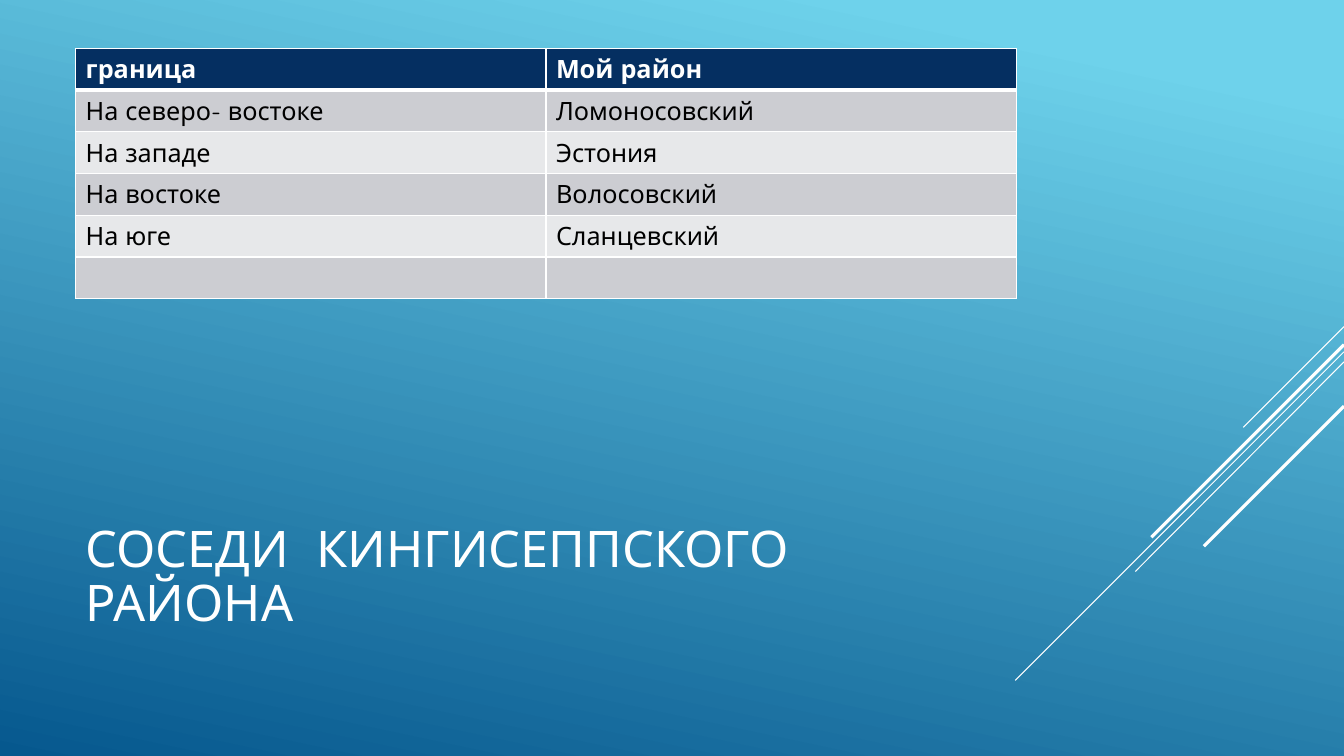
from typing import NamedTuple

from lxml.etree import SubElement
from pptx import Presentation
from pptx.dml.color import RGBColor
from pptx.enum.shapes import MSO_CONNECTOR as Connector
from pptx.enum.text import MSO_ANCHOR as Anchor
from pptx.enum.text import MSO_AUTO_SIZE as AutoSize
from pptx.enum.text import PP_ALIGN as Align
from pptx.oxml import parse_xml
from pptx.oxml.ns import nsdecls, qn
from pptx.util import Inches, Pt

FONT = "Quicksand"
COLOURS = {
    "white": "FFFFFF",
    "black": "000000",
    "sky": "6ED2EB",
    "deep": "06588E",
    "header": "052F61",
    "dark_band": "CCCDD2",
    "light_band": "E7E8EA",
}
LEFT, WIDTH = 0.75, 9.33
SLIDE_WIDTH, SLIDE_HEIGHT = 13.33, 7.5
ROW_HEIGHT = 0.41


class Streak(NamedTuple):
    """A diagonal that starts on the right edge of the slide."""
    top: float
    end_x: float
    end_y: float
    weight: float


class Neighbour(NamedTuple):
    side: str
    district: str


STREAKS = [
    Streak(3.24, 12.33, 4.24, 0.75),
    Streak(3.49, 10.07, 6.75, 0.75),
    Streak(3.59, 11.26, 5.67, 0.75),
    Streak(3.42, 11.42, 5.33, 2.25),
    Streak(4.03, 11.94, 5.42, 2.25),
]
NEIGHBOURS = [
    Neighbour("граница", "Мой район"),
    Neighbour("На северо- востоке", "Ломоносовский"),
    Neighbour("На западе", "Эстония"),
    Neighbour("На востоке", "Волосовский"),
    Neighbour("На юге", "Сланцевский"),
    Neighbour("", ""),
]


def rgb(name: str) -> RGBColor:
    return RGBColor.from_string(COLOURS[name])


def write_text(frame, text: str, *, size: float, colour: str,
               bold: bool = False, line_spacing: float = 1.0) -> None:
    paragraph = frame.paragraphs[0]
    paragraph.alignment = Align.LEFT
    paragraph.line_spacing = line_spacing
    paragraph.font.size = Pt(size)
    if text:
        run = paragraph.add_run()
        run.text = text
        run.font.name = FONT
        run.font.size = Pt(size)
        run.font.bold = bold
        run.font.color.rgb = rgb(colour)


def paint_background(slide) -> None:
    fill = slide.background.fill
    fill.gradient()
    fill.gradient_angle = 258
    for stop, colour, position in zip(fill.gradient_stops, ("sky", "deep"), (0.1, 1)):
        stop.color.rgb = rgb(colour)
        stop.position = position


def draw_streak(slide, streak: Streak) -> None:
    line = slide.shapes.add_connector(
        Connector.STRAIGHT, Inches(SLIDE_WIDTH), Inches(streak.top),
        Inches(streak.end_x), Inches(streak.end_y))
    line.line.color.rgb = rgb("white")
    line.line.width = Pt(streak.weight)
    SubElement(line._element.spPr, qn("a:effectLst"))


def set_borders(cell, *, top: float, bottom: float) -> None:
    properties = cell._tc.get_or_add_tcPr()
    widths = {"lnL": 1, "lnR": 1, "lnT": top, "lnB": bottom}
    for index, (side, width) in enumerate(widths.items()):
        properties.insert(index, parse_xml(
            f'<a:{side} {nsdecls("a")} w="{Pt(width)}"><a:solidFill>'
            f'<a:srgbClr val="{COLOURS["white"]}"/></a:solidFill></a:{side}>'))


def draw_table(slide) -> None:
    columns = len(Neighbour._fields)
    table = slide.shapes.add_table(
        len(NEIGHBOURS), columns, Inches(LEFT), Inches(0.48),
        Inches(WIDTH), Inches(ROW_HEIGHT * len(NEIGHBOURS))).table
    for row, neighbour in enumerate(NEIGHBOURS):
        is_header = row == 0
        band = "dark_band" if row % 2 else "light_band"
        for column, text in enumerate(neighbour):
            cell = table.cell(row, column)
            cell.fill.solid()
            cell.fill.fore_color.rgb = rgb("header" if is_header else band)
            set_borders(cell, top=3 if row == 1 else 1, bottom=3 if is_header else 1)
            write_text(cell.text_frame, text, size=18, bold=is_header,
                       colour="white" if is_header else "black")


def set_title(slide) -> None:
    title = slide.shapes.title
    title.left, title.top = Inches(LEFT), Inches(4.91)
    title.width, title.height = Inches(WIDTH), Inches(1.65)
    frame = title.text_frame
    frame.word_wrap = True
    frame.auto_size = AutoSize.NONE
    frame.vertical_anchor = Anchor.MIDDLE
    write_text(frame, "СОСЕДИ  КИНГИСЕППСКОГО РАЙОНА", size=36,
               colour="white", line_spacing=0.9)


def main() -> None:
    presentation = Presentation()
    presentation.slide_width = Inches(SLIDE_WIDTH)
    presentation.slide_height = Inches(SLIDE_HEIGHT)
    slide = presentation.slides.add_slide(presentation.slide_layouts[5])
    paint_background(slide)
    for streak in STREAKS:
        draw_streak(slide, streak)
    set_title(slide)
    draw_table(slide)
    presentation.save("out.pptx")


if __name__ == "__main__":
    main()
